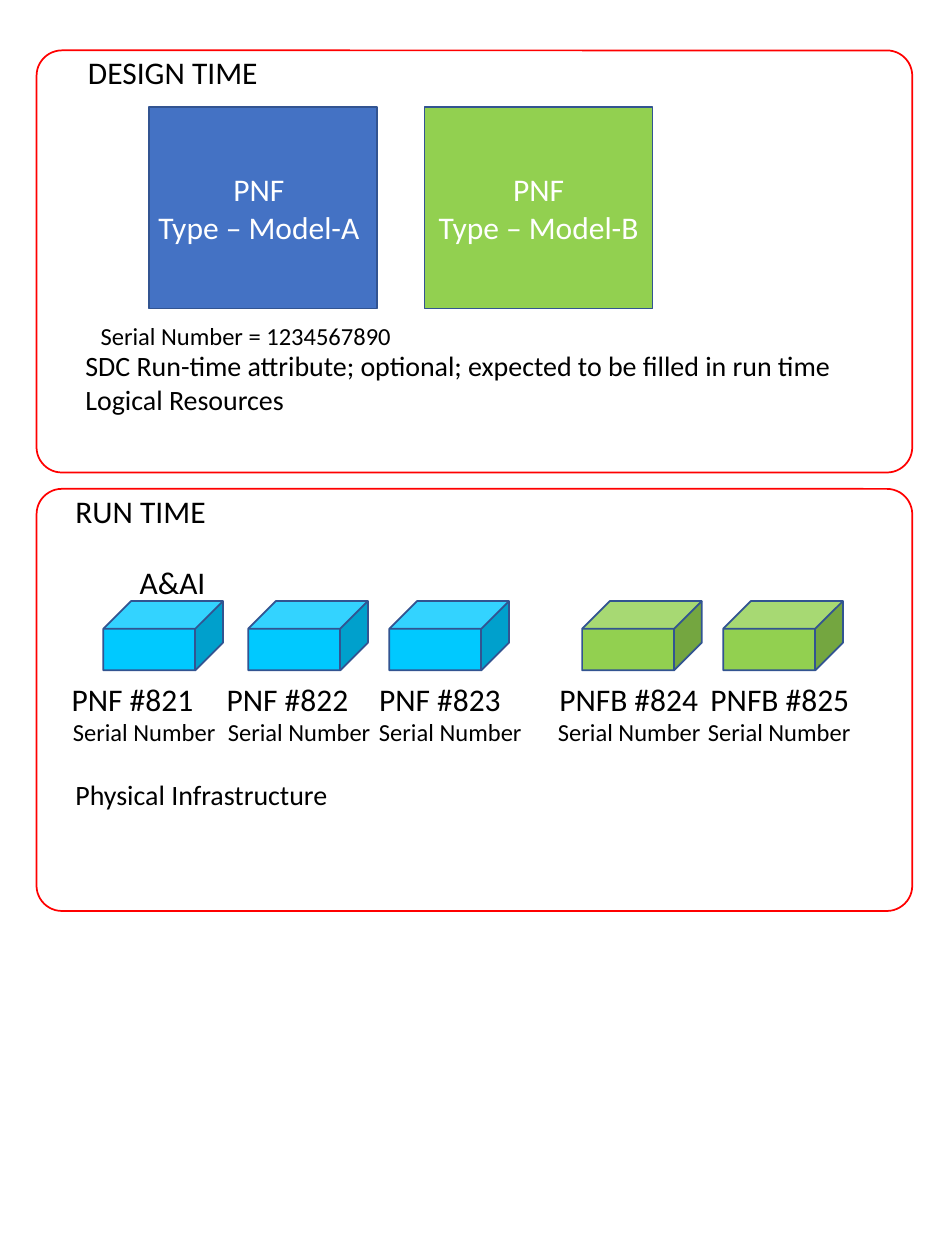
from dataclasses import dataclass
from typing import Optional

from pptx import Presentation
from pptx.dml.color import RGBColor
from pptx.enum.shapes import MSO_SHAPE as Preset
from pptx.enum.text import MSO_AUTO_SIZE as AutoSize, PP_ALIGN as Align
from pptx.util import Inches, Pt

BLACK = RGBColor(0x00, 0x00, 0x00)
WHITE = RGBColor(0xFF, 0xFF, 0xFF)
RED = RGBColor(0xFF, 0x00, 0x00)
NAVY = RGBColor(0x32, 0x54, 0x91)
BLUE = RGBColor(0x44, 0x72, 0xC4)
GREEN = RGBColor(0x92, 0xD0, 0x50)
CYAN = RGBColor(0x00, 0xC9, 0xFF)

FONT = "Calibri"
COLUMNS, ROWS = 75, 100

deck = Presentation()
deck.slide_width, deck.slide_height = Inches(7.5), Inches(10)
COLUMN = deck.slide_width / COLUMNS
ROW = deck.slide_height / ROWS
slide = deck.slides.add_slide(deck.slide_layouts[6])


@dataclass(frozen=True)
class Area:
    column: float
    row: float
    columns: float
    rows: float

    def emu(self) -> tuple[int, int, int, int]:
        return (round(self.column * COLUMN), round(self.row * ROW),
                round(self.columns * COLUMN), round(self.rows * ROW))


@dataclass(frozen=True)
class Label:
    text: str
    area: Area
    size: int = 18
    color: RGBColor = BLACK
    align: Align = Align.LEFT


@dataclass(frozen=True)
class Model:
    name: str
    column: float
    text_column: float
    fill: RGBColor


@dataclass(frozen=True)
class Device:
    name: str
    column: float
    name_column: float
    name_columns: float
    serial_column: float
    fill: RGBColor


def draw_block(preset: Preset, area: Area, line: RGBColor,
               fill: Optional[RGBColor] = None,
               adjustment: Optional[float] = None) -> None:
    block = slide.shapes.add_shape(preset, *area.emu())
    block.shadow.inherit = False
    if fill is None:
        block.fill.background()
    else:
        block.fill.solid()
        block.fill.fore_color.rgb = fill
    block.line.color.rgb = line
    block.line.width = Pt(1)
    if adjustment is not None:
        block.adjustments[0] = adjustment


def draw_label(label: Label) -> None:
    frame = slide.shapes.add_textbox(*label.area.emu()).text_frame
    frame.word_wrap = False
    frame.auto_size = AutoSize.SHAPE_TO_FIT_TEXT
    frame.text = label.text
    for paragraph in frame.paragraphs:
        paragraph.alignment = label.align
        for run in paragraph.runs:
            run.font.name = FONT
            run.font.size = Pt(label.size)
            run.font.color.rgb = label.color


def draw_model(model: Model) -> None:
    draw_block(Preset.RECTANGLE, Area(model.column, 8.5, 18.1, 16), NAVY, model.fill)
    draw_label(Label(f"PNF\nType – {model.name}", Area(model.text_column, 13, 18.1, 7.1),
                     color=WHITE, align=Align.CENTER))


def draw_device(device: Device) -> None:
    draw_block(Preset.CUBE, Area(device.column, 47.7, 9.5, 5.5), NAVY, device.fill, 0.4)
    draw_label(Label(device.name, Area(device.name_column, 53.5, device.name_columns, 4)))
    draw_label(Label("Serial Number", Area(device.serial_column, 56.4, 13.4, 3.4), 14))


MODELS = [
    Model("Model-A", 11.8, 11.5, BLUE),
    Model("Model-B", 33.7, 33.7, GREEN),
]
DEVICES = [
    Device("PNF #821", 8.2, 4.7, 11.8, 4.8, CYAN),
    Device("PNF #822", 19.7, 17, 11.8, 17.1, CYAN),
    Device("PNF #823", 30.9, 29.1, 11.8, 29.1, CYAN),
    Device("PNFB #824", 46.2, 43.4, 13.2, 43.3, GREEN),
    Device("PNFB #825", 57.4, 55.4, 13.2, 55.2, GREEN),
]
PANEL_ROWS = [4, 38.8]
LABELS = [
    Label("DESIGN TIME", Area(6, 3.7, 15.6, 4)),
    Label("RUN TIME", Area(5, 38.6, 12.5, 4)),
    Label("A&AI", Area(10.1, 44.2, 7.3, 4)),
    Label("Serial Number = 1234567890", Area(7, 25, 25.3, 3.4), 14),
    Label("SDC Run-time attribute; optional; expected to be filled in run time\n"
          "Logical Resources", Area(5.8, 27.2, 62, 6.4), 16),
    Label("Physical Infrastructure", Area(5, 61.2, 22.2, 3.7), 16),
]

for model in MODELS:
    draw_model(model)
for device in DEVICES:
    draw_device(device)
for panel_row in PANEL_ROWS:
    draw_block(Preset.ROUNDED_RECTANGLE, Area(2.9, panel_row, 69.5, 33.5), RED,
               adjustment=0.06)
for label in LABELS:
    draw_label(label)

deck.save("out.pptx")
